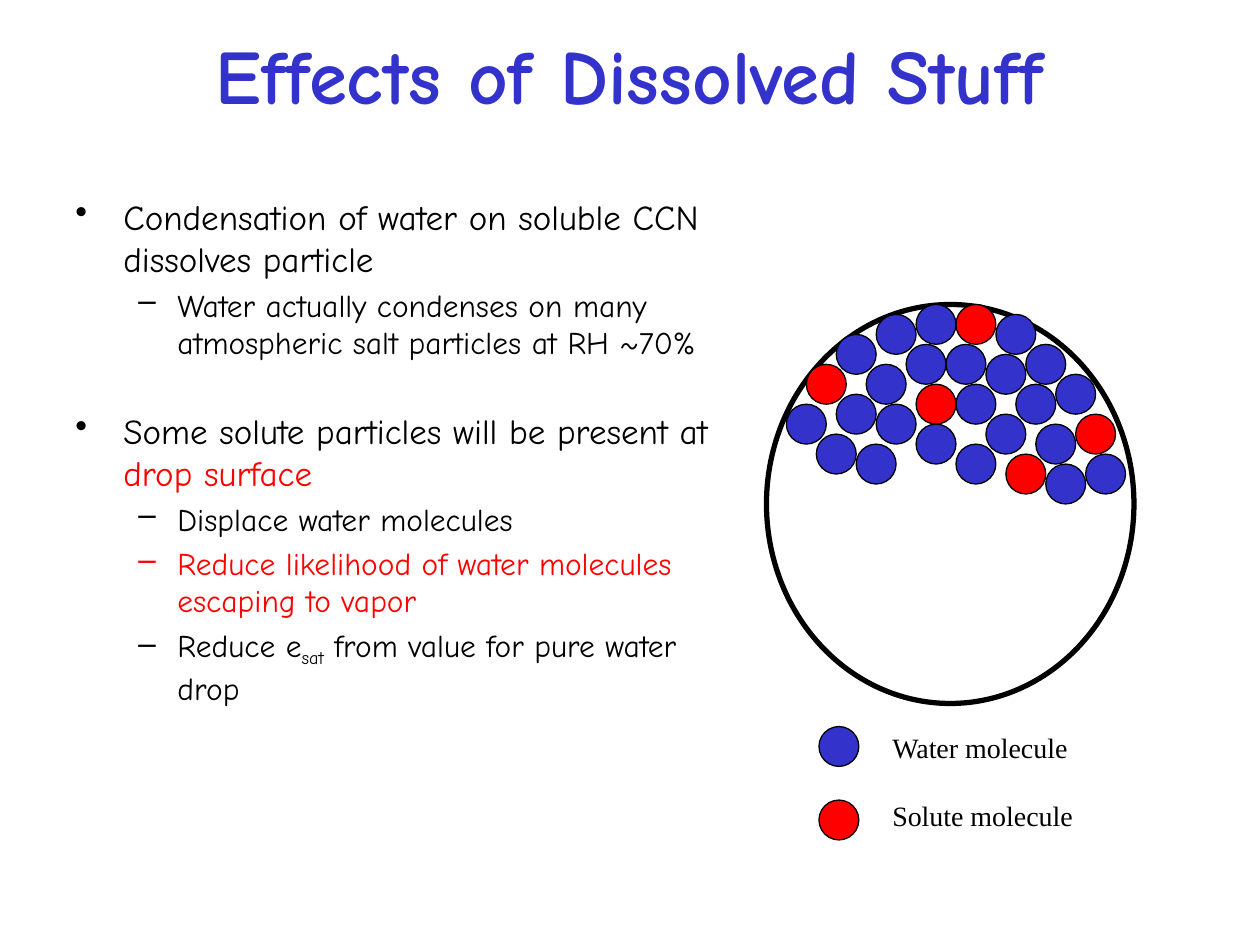
"""Build the slide on how dissolved particles change a cloud drop's surface."""
from dataclasses import dataclass

from lxml import etree
from pptx import Presentation
from pptx import util as u
from pptx.dml.color import RGBColor
from pptx.enum import shapes, text
from pptx.oxml.ns import qn

COLUMNS, ROWS = 120, 90
WIDTH, HEIGHT = u.Inches(10), u.Inches(7.5)
COLORS = {"water": "3333CC", "solute": "FF0000", "ink": "000000",
          "title": "3333CC", "accent": "FF0000"}
CELL = 0.95
DIAMETER = 4 * CELL
HAND, SERIF = "Comic Neue", "Times New Roman"


@dataclass(frozen=True)
class Area:
    """A rectangle in columns and rows of the slide grid."""
    column: float
    row: float
    columns: float
    rows: float

    def box(self) -> tuple[int, int, int, int]:
        """Return left, top, width and height as slide lengths."""
        return (round(WIDTH * self.column / COLUMNS), round(HEIGHT * self.row / ROWS),
                round(WIDTH * self.columns / COLUMNS), round(HEIGHT * self.rows / ROWS))


@dataclass(frozen=True)
class Run:
    """Words with a colour and a baseline shift in percent."""
    words: str
    color: str = "ink"
    baseline: int = 0


@dataclass(frozen=True)
class Level:
    """The look of one outline level."""
    bullet: str
    indent: float
    hanging: float
    size: int
    before: float


@dataclass(frozen=True)
class Point:
    """One bulleted paragraph."""
    level: int
    runs: tuple[Run, ...]
    extra_before: float = 0


DROP = Area(73, 29, 35, 38)
LEVELS = (Level("•", 0.38, 0.38, 20, 6), Level("–", 0.81, 0.31, 18, 3.6))
POINTS = (
    Point(0, (Run("Condensation of water on soluble CCN dissolves particle"),)),
    Point(1, (Run("Water actually condenses on many atmospheric salt particles at RH ~70%"),)),
    Point(0, (Run("Some solute particles will be present at "),
              Run("drop surface", "accent")), 21.5),
    Point(1, (Run("Displace water molecules"),)),
    Point(1, (Run("Reduce likelihood of water molecules escaping to vapor", "accent"),)),
    Point(1, (Run("Reduce e"), Run("sat", baseline=-25),
              Run(" from value for pure water drop"))),
)
MOLECULES = {
    "water": ((18, 4), (14, 4), (22, 5), (22, 11), (19, 8), (25, 8), (32, 15), (5, 13),
              (29, 7), (26, 4), (23, 1), (2, 10), (7, 3), (15, 0), (11, 1), (28, 16),
              (15, 12), (11, 10), (27, 12), (10, 6), (9, 14), (7, 9), (19, 14)),
    "solute": ((19, 0), (31, 11), (15, 8), (4, 6), (24, 15)),
}
LEGEND = {"water": "Water molecule", "solute": "Solute molecule"}


def apply(target, formats: dict) -> None:
    """Set each named attribute on the target."""
    for name, value in formats.items():
        setattr(target, name, value)


def style_font(font, name: str, size: float, color: str, bold: bool = False) -> None:
    """Give a font its face, size, colour and weight."""
    apply(font, {"name": name, "size": u.Pt(size), "bold": bold})
    font.color.rgb = RGBColor.from_string(COLORS[color])


def add_title(slide, words: str) -> None:
    """Place and format the title placeholder."""
    title = slide.shapes.title
    apply(title, dict(zip(("left", "top", "width", "height"), Area(4, 2, 112, 10).box())))
    apply(title.text_frame, {"text": words, "word_wrap": True,
                             "vertical_anchor": text.MSO_ANCHOR.MIDDLE})
    heading = title.text_frame.paragraphs[0]
    heading.alignment = text.PP_ALIGN.CENTER
    style_font(heading.runs[0].font, HAND, 44, "title", True)


def add_points(slide, area: Area, points: tuple[Point, ...]) -> None:
    """Write the two-level bulleted outline."""
    outline = slide.shapes.add_textbox(*area.box()).text_frame
    outline.word_wrap = True
    for index, point in enumerate(points):
        level = LEVELS[point.level]
        paragraph = outline.add_paragraph() if index else outline.paragraphs[0]
        properties = paragraph._p.get_or_add_pPr()
        properties.set("marL", str(u.Inches(level.indent)))
        properties.set("indent", str(-u.Inches(level.hanging)))
        etree.SubElement(properties, qn("a:buChar")).set("char", level.bullet)
        before = level.before + point.extra_before if index else 0
        apply(paragraph, {"level": point.level, "space_before": u.Pt(before)})
        for part in point.runs:
            run = paragraph.add_run()
            run.text = part.words
            style_font(run.font, HAND, level.size, part.color)
            if part.baseline:
                run._r.get_or_add_rPr().set("baseline", str(part.baseline * 1000))


def add_circle(group, area: Area, line_width: float, kind: str | None = None) -> None:
    """Draw an outlined ellipse, filled when a molecule kind is given."""
    circle = group.shapes.add_shape(shapes.MSO_SHAPE.OVAL, *area.box())
    circle.shadow.inherit = False
    circle.line.width = u.Pt(line_width)
    circle.line.color.rgb = RGBColor.from_string(COLORS["ink"])
    if kind:
        circle.fill.solid()
        circle.fill.fore_color.rgb = RGBColor.from_string(COLORS[kind])
    else:
        circle.fill.background()


def add_drop(slide) -> None:
    """Draw the drop with molecules packed under its upper surface."""
    drop = slide.shapes.add_group_shape()
    add_circle(drop, DROP, 3)
    for kind, places in MOLECULES.items():
        for column, row in places:
            add_circle(drop, Area(DROP.column + column * CELL, DROP.row + row * CELL,
                                  DIAMETER, DIAMETER), 0.75, kind)


def add_legend(slide) -> None:
    """Draw the key to the molecule colours."""
    legend = slide.shapes.add_group_shape()
    for index, kind in enumerate(LEGEND):
        add_circle(legend, Area(78, 69.2 + 7 * index, DIAMETER, DIAMETER), 0.75, kind)
    labels = legend.shapes.add_textbox(*Area(83.8, 69, 19.7, 10.8).box()).text_frame
    labels.word_wrap = True
    for index, label in enumerate(LEGEND.values()):
        paragraph = labels.add_paragraph() if index else labels.paragraphs[0]
        apply(paragraph, {"text": label, "space_before": u.Pt(19.5 * index)})
        style_font(paragraph.runs[0].font, SERIF, 16, "ink")


def main() -> None:
    """Assemble and save the slide."""
    deck = Presentation()
    apply(deck, {"slide_width": WIDTH, "slide_height": HEIGHT})
    slide = deck.slides.add_slide(deck.slide_layouts[5])
    add_title(slide, "Effects of Dissolved Stuff")
    add_points(slide, Area(6, 18, 64, 62), POINTS)
    add_drop(slide)
    add_legend(slide)
    deck.save("out.pptx")


if __name__ == "__main__":
    main()
